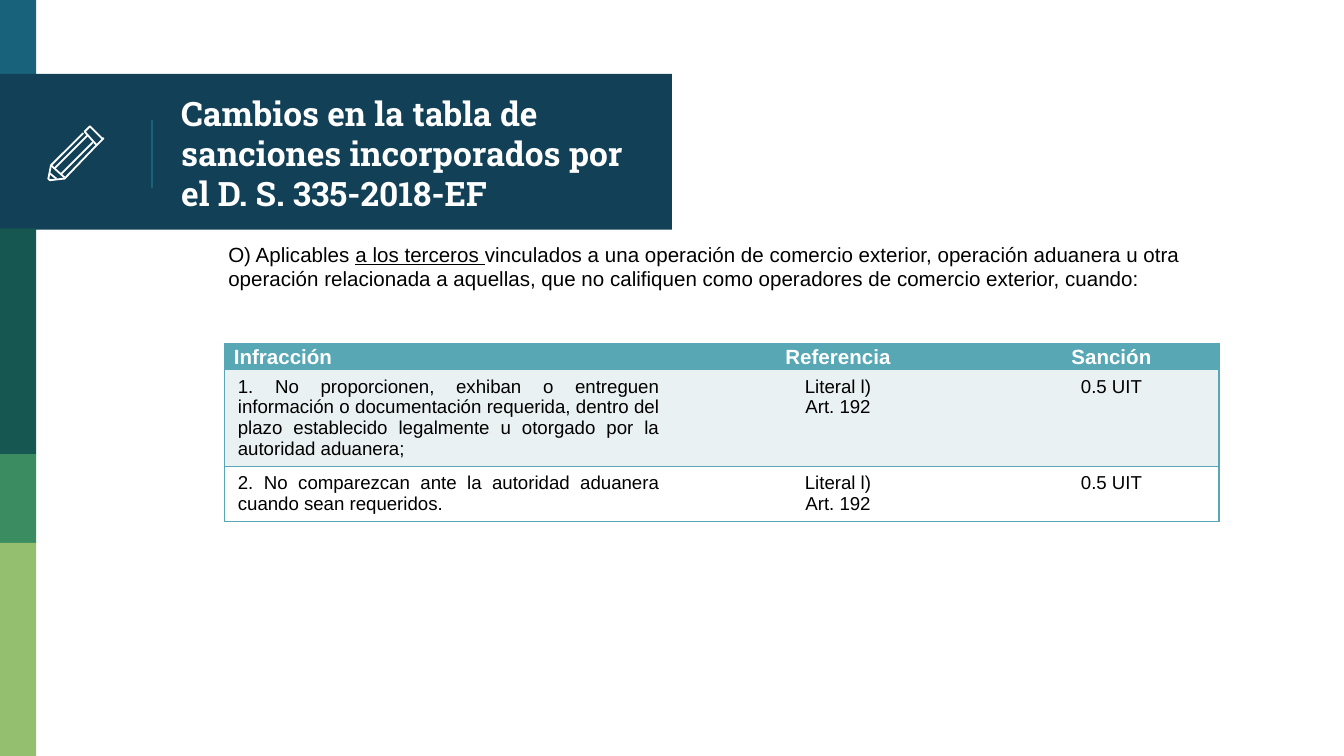
import pptx
import pptx.dml.color
import pptx.enum.shapes
import pptx.enum.text
import pptx.oxml
import pptx.oxml.ns
import pptx.util
from pptx.util import Inches

COLORS = {
    "blue": "18637B", "navy": "124057", "teal": "165751", "green": "3B8D61",
    "lime": "94BF6E", "white": "FFFFFF", "black": "000000",
    "table": "57A7B5", "band": "EAF1F3",
}
ALIGN = pptx.enum.text.PP_ALIGN
BODY_FONT = "Arial"
TITLE_FONT = "Roboto Slab"


def rgb(name):
    return pptx.dml.color.RGBColor.from_string(COLORS[name])


class SlideBuilder:
    """Holds the slide being built and the style of its elements."""

    def __init__(self, slide):
        self.slide = slide
        self.shapes = slide.shapes

    def style_run(self, run, size, color, font=BODY_FONT, bold=False):
        run.font.name = font
        run.font.size = pptx.util.Pt(size)
        run.font.bold = bold
        run.font.color.rgb = rgb(color)

    def block(self, left, top, width, height, color):
        shape = self.shapes.add_shape(
            pptx.enum.shapes.MSO_SHAPE.RECTANGLE,
            Inches(left), Inches(top), Inches(width), Inches(height))
        shape.shadow.inherit = False
        shape.fill.solid()
        shape.fill.fore_color.rgb = rgb(color)
        shape.line.fill.background()

    def line(self, start, end, color, width):
        connector = self.shapes.add_connector(
            pptx.enum.shapes.MSO_CONNECTOR.STRAIGHT,
            Inches(start[0]), Inches(start[1]), Inches(end[0]), Inches(end[1]))
        connector.line.color.rgb = rgb(color)
        connector.line.width = pptx.util.Pt(width)
        properties = connector._element.spPr
        properties.append(pptx.oxml.parse_xml(
            f"<a:effectLst {pptx.oxml.ns.nsdecls('a')}/>"))

    def outline(self, points, color, width, close):
        corners = [(Inches(x), Inches(y)) for x, y in points]
        builder = self.shapes.build_freeform(*corners[0])
        builder.add_line_segments(corners[1:], close=close)
        shape = builder.convert_to_shape()
        shape.shadow.inherit = False
        shape.fill.background()
        shape.line.color.rgb = rgb(color)
        shape.line.width = pptx.util.Pt(width)

    def text(self, left, top, width, height, parts, size, color, **style):
        """Adds one paragraph made of (text, underlined) parts."""
        box = self.shapes.add_textbox(
            Inches(left), Inches(top), Inches(width), Inches(height))
        box.text_frame.word_wrap = True
        para = box.text_frame.paragraphs[0]
        for words, underlined in parts:
            run = para.add_run()
            run.text = words
            self.style_run(run, size, color, **style)
            run.font.underline = underlined
        return box.text_frame

    def cell_borders(self, cell, visible):
        properties = cell._tc.get_or_add_tcPr()
        for side in "LRTB":
            if side in visible:
                paint = (f'<a:solidFill><a:srgbClr val="{COLORS["table"]}"/>'
                         '</a:solidFill>')
            else:
                paint = "<a:noFill/>"
            properties.append(pptx.oxml.parse_xml(
                f'<a:ln{side} {pptx.oxml.ns.nsdecls("a")} w="12700">'
                f"{paint}</a:ln{side}>"))

    def table(self, left, top, widths, heights, rows, fills):
        frame = self.shapes.add_table(
            len(rows), len(widths), Inches(left), Inches(top),
            Inches(sum(widths)), Inches(sum(heights)))
        table = frame.table
        for column, width in zip(table.columns, widths):
            column.width = Inches(width)
        for row, height in zip(table.rows, heights):
            row.height = Inches(height)
        last = len(widths) - 1
        for r, values in enumerate(rows):
            header = r == 0
            for c, value in enumerate(values):
                cell = table.cell(r, c)
                sides = "TB" + ("L" if c == 0 else "") + ("R" if c == last else "")
                self.cell_borders(cell, sides)
                cell.fill.solid()
                cell.fill.fore_color.rgb = rgb(fills[r])
                if header:
                    cell.margin_left = cell.margin_right = Inches(0.07)
                    cell.margin_top = cell.margin_bottom = 0
                cell.text_frame.text = value
                for para in cell.text_frame.paragraphs:
                    if c > 0:
                        para.alignment = ALIGN.CENTER
                    elif not header:
                        para.alignment = ALIGN.JUSTIFY
                    if header:
                        para.line_spacing = 1.07
                    for run in para.runs:
                        self.style_run(run, 11 if header else 10,
                                       "white" if header else "black",
                                       bold=header)

    def pencil(self):
        eraser = [(0.76, 1.03), (0.68, 0.95), (0.67, 0.94), (0.66, 0.95),
                  (0.63, 0.98), (0.72, 1.08), (0.76, 1.04), (0.77, 1.03)]
        body = [(0.62, 0.99), (0.38, 1.23), (0.36, 1.33), (0.37, 1.34),
                (0.38, 1.34), (0.47, 1.33), (0.48, 1.33), (0.72, 1.08)]
        self.outline(eraser, "white", 0.96, close=True)
        self.outline(body, "white", 0.96, close=False)
        for start, end in [((0.69, 1.06), (0.45, 1.3)),
                           ((0.41, 1.25), (0.65, 1.01)),
                           ((0.42, 1.33), (0.37, 1.29)),
                           ((0.38, 1.23), (0.48, 1.32))]:
            self.outline([start, end], "white", 0.96, close=False)


def main():
    deck = pptx.Presentation()
    deck.slide_width = Inches(10)
    deck.slide_height = deck.slide_width * 9 // 16
    page = SlideBuilder(deck.slides.add_slide(deck.slide_layouts[6]))

    page.block(0, 0, 0.27, 0.58, "blue")
    page.block(0, 0.55, 5, 1.16, "navy")
    page.block(0, 1.7, 0.27, 1.68, "teal")
    page.block(0, 3.38, 0.27, 0.66, "green")
    page.block(0, 4.04, 0.27, 1.59, "lime")
    page.line((1.13, 0.89), (1.13, 1.4), "blue", 0.75)

    title = page.text(
        1.25, 0.58, 3.75, 1.12,
        [("Cambios en la tabla de sanciones incorporados por "
          "el D. S. 335-2018-EF", False)],
        18, "white", font=TITLE_FONT, bold=True)
    title.margin_top = title.margin_bottom = Inches(0.1)
    title.vertical_anchor = pptx.enum.text.MSO_ANCHOR.MIDDLE
    title.auto_size = pptx.enum.text.MSO_AUTO_SIZE.TEXT_TO_FIT_SHAPE
    page.pencil()

    reference, penalty = "Literal l)\nArt. 192", "0.5 UIT"
    page.table(
        1.67, 2.56, [3.33, 2.47, 1.6], [0.19, 0.71, 0.41],
        [["Infracción", "Referencia", "Sanción"],
         ["1. No proporcionen, exhiban o entreguen información o "
          "documentación requerida, dentro del plazo establecido legalmente "
          "u otorgado por la autoridad aduanera;", reference, penalty],
         ["2. No comparezcan ante la autoridad aduanera cuando sean "
          "requeridos.", reference, penalty]],
        ["table", "band", "white"])

    page.text(
        1.6, 1.75, 7.51, 0.47,
        [("O) Aplicables ", False), ("a los terceros ", True),
         ("vinculados a una operación de comercio exterior, operación "
          "aduanera u otra operación relacionada a aquellas, que no "
          "califiquen como operadores de comercio exterior, cuando:", False)],
        11, "black")

    deck.save("out.pptx")


if __name__ == "__main__":
    main()
